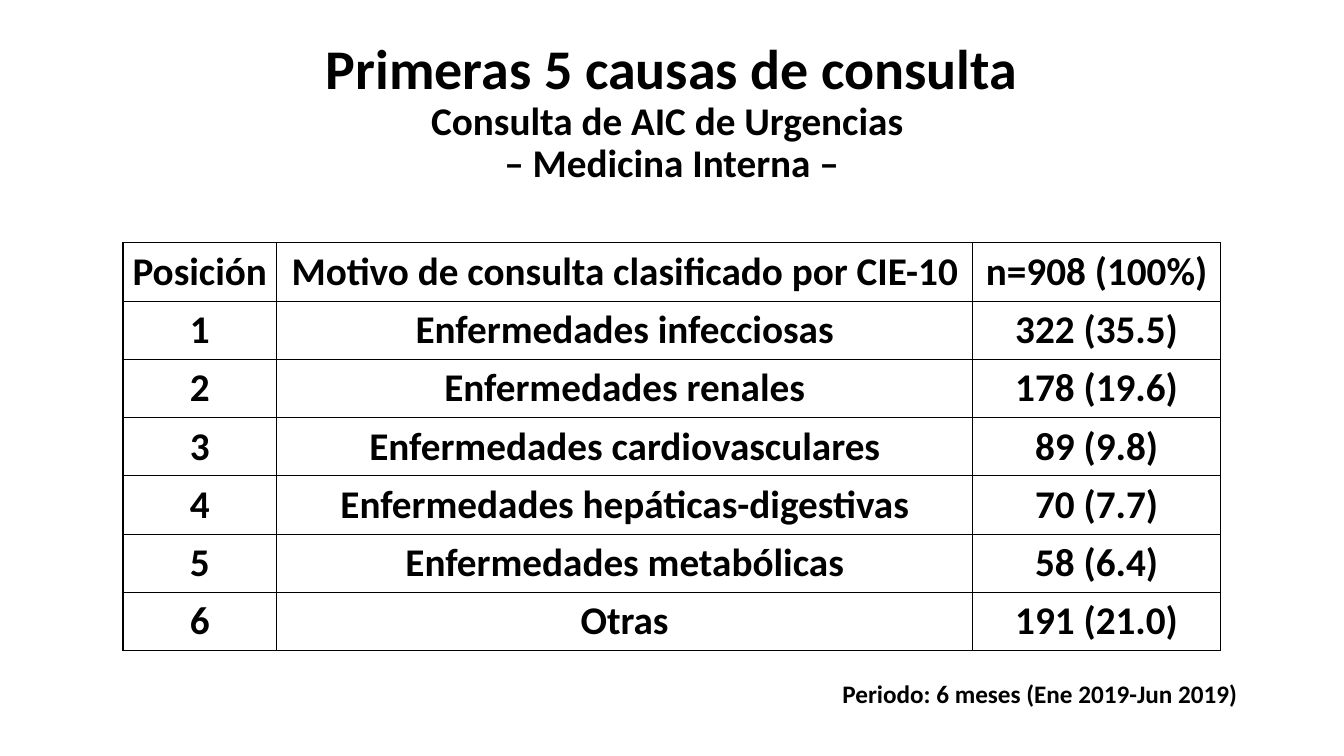
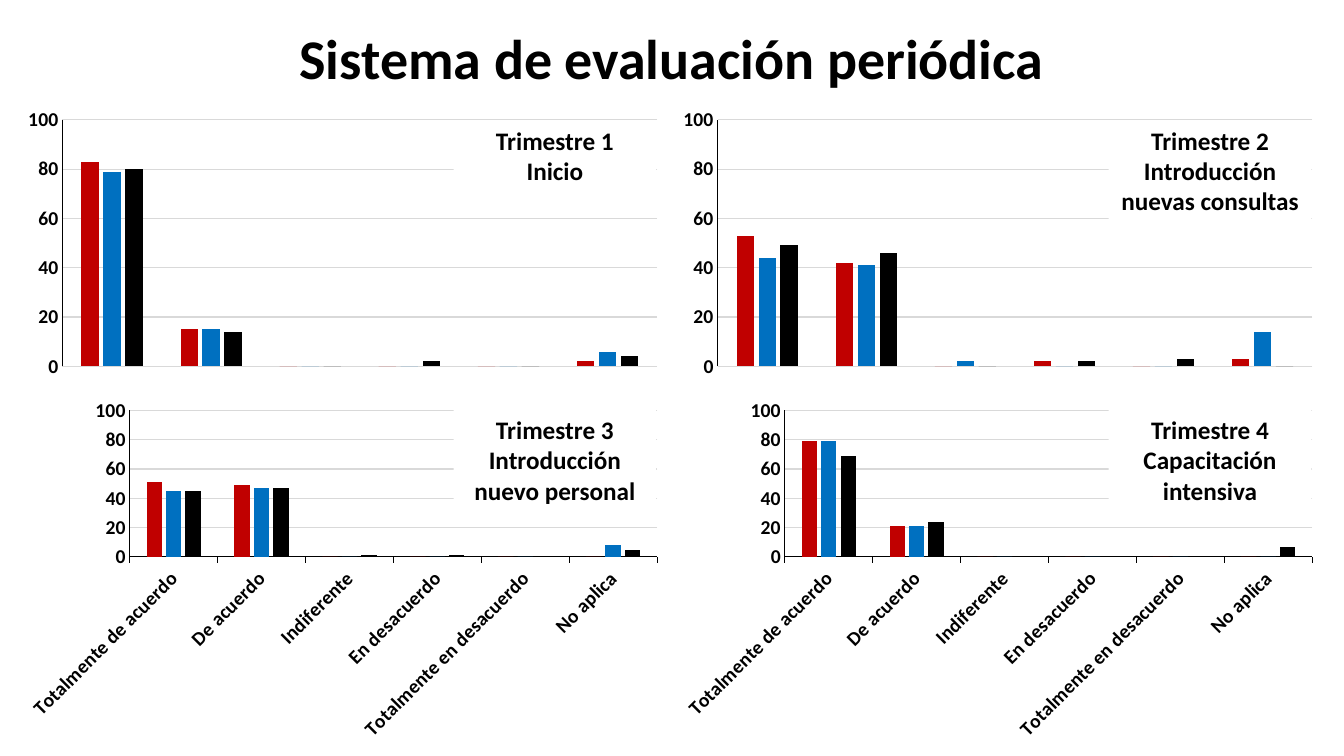
from lxml import etree
from pptx import Presentation
from pptx.chart.data import CategoryChartData
from pptx.dml.color import RGBColor
from pptx.enum.chart import XL_CHART_TYPE, XL_TICK_MARK
from pptx.enum.text import MSO_ANCHOR, MSO_AUTO_SIZE, PP_ALIGN
from pptx.oxml.ns import qn
from pptx.util import Cm, Pt

COLUMNS = XL_CHART_TYPE.COLUMN_CLUSTERED
NO_TICK, OUT_TICK = XL_TICK_MARK.NONE, XL_TICK_MARK.OUTSIDE
CENTER, MIDDLE = PP_ALIGN.CENTER, MSO_ANCHOR.MIDDLE
NO_FIT = MSO_AUTO_SIZE.NONE

FONT = "Calibri"
COLORS = {"ink": "000000", "paper": "FFFFFF", "grid": "D9D9D9",
          "red": "C00000", "blue": "0070C0"}

# Content
CAUSES = "Primeras 5 causas de consulta\vConsulta de AIC de Urgencias \v– Medicina Interna –"
ROWS = [
    ("Posición", "Motivo de consulta clasificado por CIE-10", "n=908 (100%)"),
    ("1", "Enfermedades infecciosas", "322 (35.5)"),
    ("2", "Enfermedades renales", "178 (19.6)"),
    ("3", "Enfermedades cardiovasculares", "89 (9.8)"),
    ("4", "Enfermedades hepáticas-digestivas", "70 (7.7)"),
    ("5", "Enfermedades metabólicas", "58 (6.4)"),
    ("6", "Otras", "191 (21.0)"),
]
PERIOD = "Periodo: 6 meses (Ene 2019-Jun 2019)"
REVIEW = "Sistema de evaluación periódica"
ANSWERS = ["Totalmente de acuerdo", "De acuerdo", "Indiferente",
           "En desacuerdo", "Totalmente en desacuerdo", "No aplica"]
SERIES = [("Series 1", "red"), ("Series 2", "blue"), ("Series 3", "ink")]
TERMS = [
    ("Trimestre 1\nInicio",
     [(83, 15, 0, 0, 0, 2), (79, 15, 0, 0, 0, 6), (80, 14, 0, 2, 0, 4)]),
    ("Trimestre 2\nIntroducción nuevas consultas",
     [(53, 42, 0, 2, 0, 3), (44, 41, 2, 0, 0, 14), (49, 46, 0, 2, 3, 0)]),
    ("Trimestre 3\nIntroducción nuevo personal",
     [(51, 49, 0, 0, 0, 0), (45, 47, 0, 0, 0, 8), (45, 47, 1, 1, 0, 5)]),
    ("Trimestre 4\nCapacitación intensiva",
     [(79, 21, 0, 0, 0, 0), (79, 21, 0, 0, 0, 0), (69, 24, 0, 0, 0, 7)]),
]

# Layout in centimetres
COLS = (3.87, 17.54, 6.25)
ROW = 1.46
LEFT, WIDE = 0.38, 16.51
BANDS = [(2.57, 7.11), (9.86, 8.99)]  # top and height of each chart row


def rgb(name):
    return RGBColor.from_string(COLORS[name])


def style(font, size):
    font.name, font.size, font.bold = FONT, Pt(size), True
    font.color.rgb = rgb("ink")


def write(frame, text, size, align=None):
    frame.text = text
    for para in frame.paragraphs:
        para.alignment = align
        for run in para.runs:
            style(run.font, size)


def new_slide(deck, text, top):
    slide = deck.slides.add_slide(deck.slide_layouts[5])
    title = slide.shapes.title
    title.left, title.top, title.width, title.height = (
        Cm(2.32), Cm(top), Cm(29.21), Cm(3.68))
    frame = title.text_frame
    frame.auto_size, frame.vertical_anchor = NO_FIT, MIDDLE
    write(frame, text, 28, CENTER)
    para = frame.paragraphs[0]
    para.line_spacing = 0.9
    para.runs[0].font.size = Pt(40)
    return slide


def add_borders(cell):
    props = cell._tc.get_or_add_tcPr()
    for i, side in enumerate(("a:lnL", "a:lnR", "a:lnT", "a:lnB")):
        line = etree.Element(qn(side), w=str(Pt(1)))
        fill = etree.SubElement(line, qn("a:solidFill"))
        etree.SubElement(fill, qn("a:srgbClr"), val=COLORS["ink"])
        props.insert(i, line)


def add_causes(slide):
    table = slide.shapes.add_table(
        len(ROWS), len(COLS), Cm(3.1), Cm(6.12),
        Cm(sum(COLS)), Cm(ROW * len(ROWS))).table
    table.first_row = table.horz_banding = False
    for col, width in zip(table.columns, COLS):
        col.width = Cm(width)
    for row, texts in zip(table.rows, ROWS):
        row.height = Cm(ROW)
        for cell, text in zip(row.cells, texts):
            cell.margin_left = cell.margin_right = Cm(0.13)
            cell.margin_top = cell.margin_bottom = Cm(0.13)
            cell.fill.background()
            write(cell.text_frame, text, 28, CENTER)
            add_borders(cell)


def style_axis(axis, tick):
    axis.major_tick_mark, axis.minor_tick_mark = tick, NO_TICK
    style(axis.tick_labels.font, 14)
    axis.format.line.color.rgb = rgb("ink")
    axis.format.line.width = Pt(0.75)


def add_bars(slide, values, left, top, height, named):
    data = CategoryChartData()
    data.categories = ANSWERS if named else [str(i + 1) for i in range(len(ANSWERS))]
    for (name, _), vals in zip(SERIES, values):
        data.add_series(name, vals)
    chart = slide.shapes.add_chart(
        COLUMNS, Cm(left), Cm(top), Cm(WIDE), Cm(height), data).chart
    chart.has_legend = chart.has_title = False
    style(chart.font, 14)
    plot = chart.plots[0]
    plot.gap_width, plot.overlap, plot.vary_by_categories = 219, -27, False
    for series, (_, color) in zip(plot.series, SERIES):
        series.format.fill.solid()
        series.format.fill.fore_color.rgb = rgb(color)

    scale = chart.value_axis
    style_axis(scale, NO_TICK)
    scale.minimum_scale, scale.maximum_scale, scale.major_unit = 0, 100, 20
    grid = scale.major_gridlines.format.line
    grid.color.rgb, grid.width = rgb("grid"), Pt(0.75)

    axis = chart.category_axis
    axis.visible = named
    if named:
        style_axis(axis, OUT_TICK)
        body = axis._element.find(qn("c:txPr")).find(qn("a:bodyPr"))
        body.set("rot", "-2700000")


def add_label(slide, text, left, top, height):
    box = slide.shapes.add_textbox(Cm(left), Cm(top), Cm(5.11), Cm(height))
    box.fill.solid()
    box.fill.fore_color.rgb = rgb("paper")
    box.text_frame.word_wrap = True
    write(box.text_frame, text, 18, CENTER)


def main():
    deck = Presentation()
    deck.slide_width, deck.slide_height = Cm(33.87), Cm(19.05)

    # Causes of consultation
    slide = new_slide(deck, CAUSES, 1.02)
    add_causes(slide)
    note = slide.shapes.add_textbox(Cm(20.98), Cm(16.97), Cm(10.57), Cm(1.03))
    note.text_frame.word_wrap = False
    write(note.text_frame, PERIOD, 18)

    # Quarterly evaluation: charts on a two by two grid
    slide = new_slide(deck, REVIEW, -0.3)
    for i, (text, values) in enumerate(TERMS):
        row, col = divmod(i, 2)
        left = LEFT + col * WIDE
        top, height = BANDS[row]
        add_bars(slide, values, left, top, height, named=row == 1)
        add_label(slide, text, left + 11.05, top + 0.46, 2.57 if i else 1.8)

    deck.save("out.pptx")


if __name__ == "__main__":
    main()
